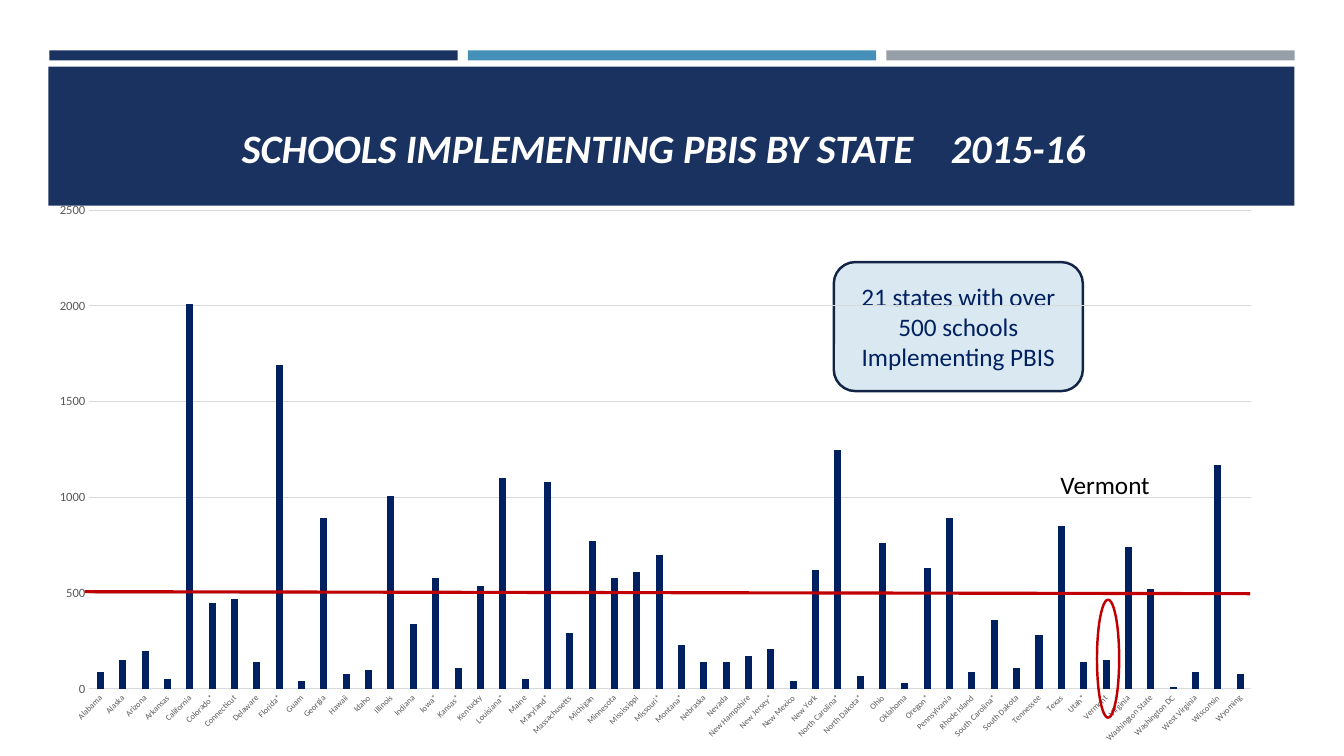
from lxml.etree import SubElement
from pptx import Presentation
from pptx.chart.data import CategoryChartData
from pptx.dml.color import RGBColor
from pptx.enum.chart import XL_CHART_TYPE, XL_TICK_MARK
from pptx.enum.shapes import MSO_CONNECTOR, MSO_SHAPE
from pptx.enum.text import MSO_ANCHOR, MSO_AUTO_SIZE, PP_ALIGN
from pptx.oxml import parse_xml
from pptx.oxml.ns import nsdecls, qn
from pptx.util import Inches, Pt

# Content
TITLE = "SCHOOLS IMPLEMENTING PBIS BY STATE\t2015-16"
NOTE = "21 states with over 500 schools Implementing PBIS"
FOCUS = "Vermont"
SCHOOLS = {
    "Alabama": 90, "Alaska": 150, "Arizona": 200, "Arkansas": 50,
    "California": 2010, "Colorado*": 450, "Connecticut": 470, "Delaware": 140,
    "Florida*": 1690, "Guam": 40, "Georgia": 890, "Hawaii": 80,
    "Idaho": 100, "Illinois": 1010, "Indiana": 340, "Iowa*": 580,
    "Kansas*": 110, "Kentucky": 540, "Louisiana*": 1100, "Maine": 50,
    "Maryland*": 1080, "Massachusetts": 290, "Michigan": 770, "Minnesota": 580,
    "Mississippi": 610, "Missouri*": 700, "Montana*": 230, "Nebraska": 140,
    "Nevada": 140, "New Hampshire": 170, "New Jersey*": 210, "New Mexico": 40,
    "New York": 620, "North Carolina*": 1250, "North Dakota*": 70, "Ohio": 760,
    "Oklahoma": 30, "Oregon*": 630, "Pennsylvania": 890, "Rhode Island": 90,
    "South Carolina*": 360, "South Dakota": 110, "Tennessee": 280, "Texas": 850,
    "Utah*": 140, "Vermont": 150, "Virginia": 740, "Washington State": 520,
    "Washington DC": 10, "West Virginia": 90, "Wisconsin": 1170, "Wyoming": 80,
}
FONT = "Calibri"
BLUE, NAVY, RED, GRAY, GRID = "1A3260", "002060", "C00000", "595959", "D9D9D9"
STRIPES = [BLUE, "4590B8", "969FA7"]
PLOT = {"x": 0.032, "y": 0.039, "w": 0.931, "h": 0.859}


def color(code):
    return RGBColor.from_string(code)


def style(font, size, code):
    font.name, font.size = FONT, Pt(size)
    font.color.rgb = color(code)


def write(shape, text, size=18, code="000000", bold=False, italic=False,
          align=PP_ALIGN.LEFT, anchor=MSO_ANCHOR.TOP):
    frame = shape.text_frame
    frame.word_wrap = True
    frame.vertical_anchor = anchor
    para = frame.paragraphs[0]
    para.alignment = align
    run = para.add_run()
    run.text = text
    style(run.font, size, code)
    run.font.bold, run.font.italic = bold, italic
    return para


def stroke(line, code, width):
    line.color.rgb = color(code)
    line.width = Pt(width)


def draw(kind, box, fill=None, edge=None):
    shape = slide.shapes.add_shape(kind, *map(Inches, box))
    shape.shadow.inherit = False
    if fill:
        shape.fill.solid()
        shape.fill.fore_color.rgb = color(fill)
    else:
        shape.fill.background()
    if edge:
        stroke(shape.line, edge, 1.75)
    else:
        shape.line.fill.background()
    return shape


deck = Presentation()
deck.slide_width, deck.slide_height = Inches(13.33), Inches(7.5)
slide = deck.slides.add_slide(deck.slide_layouts[5])

# Header stripes and band
for i, code in enumerate(STRIPES):
    draw(MSO_SHAPE.RECTANGLE, (0.49 + 4.15 * i, 0.5, 4.05, 0.1), code)
draw(MSO_SHAPE.RECTANGLE, (0.48, 0.66, 12.36, 1.38), BLUE)

# Title, in front of the band, with a tab stop before the year
title = slide.shapes.title
title.element.getparent().append(title.element)
title.left, title.top = Inches(2.3), Inches(0.89)
title.width, title.height = Inches(8.62), Inches(0.86)
para = write(title, TITLE, size=28.8, code="FFFFFF", bold=True, italic=True,
             anchor=MSO_ANCHOR.BOTTOM)
title.text_frame.auto_size = MSO_AUTO_SIZE.NONE
stops = SubElement(para.runs[0].font._element.getparent().getparent()
                   .get_or_add_pPr(), qn("a:tabLst"))
SubElement(stops, qn("a:tab"), pos=str(Inches(7.03)), algn="l")

# Callout, behind the chart
note = draw(MSO_SHAPE.ROUNDED_RECTANGLE, (8.27, 2.6, 2.47, 1.28),
            "DAE9F1", "132547")
write(note, NOTE, code=NAVY, align=PP_ALIGN.CENTER, anchor=MSO_ANCHOR.MIDDLE)

# Chart
data = CategoryChartData()
data.categories = list(SCHOOLS)
data.add_series("Series 1", list(SCHOOLS.values()))
box = map(Inches, (0.49, 1.87, 12.38, 5.53))
chart = slide.shapes.add_chart(XL_CHART_TYPE.COLUMN_CLUSTERED, *box, data).chart
chart.has_legend = chart.has_title = False
style(chart.font, 10, "000000")
plot = chart.plots[0]
plot.gap_width, plot.overlap, plot.vary_by_categories = 219, -27, False
bars = plot.series[0].format.fill
bars.solid()
bars.fore_color.rgb = color(NAVY)

# Axes
states, counts = chart.category_axis, chart.value_axis
for axis, size in ((states, 6), (counts, 9)):
    axis.major_tick_mark = axis.minor_tick_mark = XL_TICK_MARK.NONE
    style(axis.tick_labels.font, size, GRAY)
stroke(states.format.line, GRID, 0.75)
turn = states._element.find(qn("c:txPr")).find(qn("a:bodyPr"))
turn.set("rot", "-2700000")
turn.set("vert", "horz")
skip = parse_xml(f'<c:tickLblSkip {nsdecls("c")} val="1"/>')
states._element.find(qn("c:noMultiLvlLbl")).addprevious(skip)
counts.minimum_scale, counts.maximum_scale, counts.major_unit = 0, 2500, 500
counts.format.line.fill.background()
stroke(counts.major_gridlines.format.line, GRID, 0.75)

# Fixed inner plot area
area = chart._chartSpace.chart.plotArea
for old in area.findall(qn("c:layout")):
    area.remove(old)
rules = [("layoutTarget", "inner"), ("xMode", "edge"), ("yMode", "edge")]
rules += PLOT.items()
marks = "".join(f'<c:{key} val="{val}"/>' for key, val in rules)
area.insert(0, parse_xml(f'<c:layout {nsdecls("c")}><c:manualLayout>{marks}'
                         '</c:manualLayout></c:layout>'))

# Vermont marker and label
draw(MSO_SHAPE.OVAL, (10.88, 5.95, 0.22, 1.17), edge=RED)
label = slide.shapes.add_textbox(*map(Inches, (10.42, 4.61, 1.74, 0.4)))
write(label, FOCUS)
label.text_frame.auto_size = MSO_AUTO_SIZE.SHAPE_TO_FIT_TEXT

# Line at 500 schools
limit = slide.shapes.add_connector(MSO_CONNECTOR.STRAIGHT,
                                   *map(Inches, (0.84, 5.87, 12.4, 5.89)))
stroke(limit.line, RED, 2.25)
SubElement(limit.element.spPr, qn("a:effectLst"))

deck.save("out.pptx")
